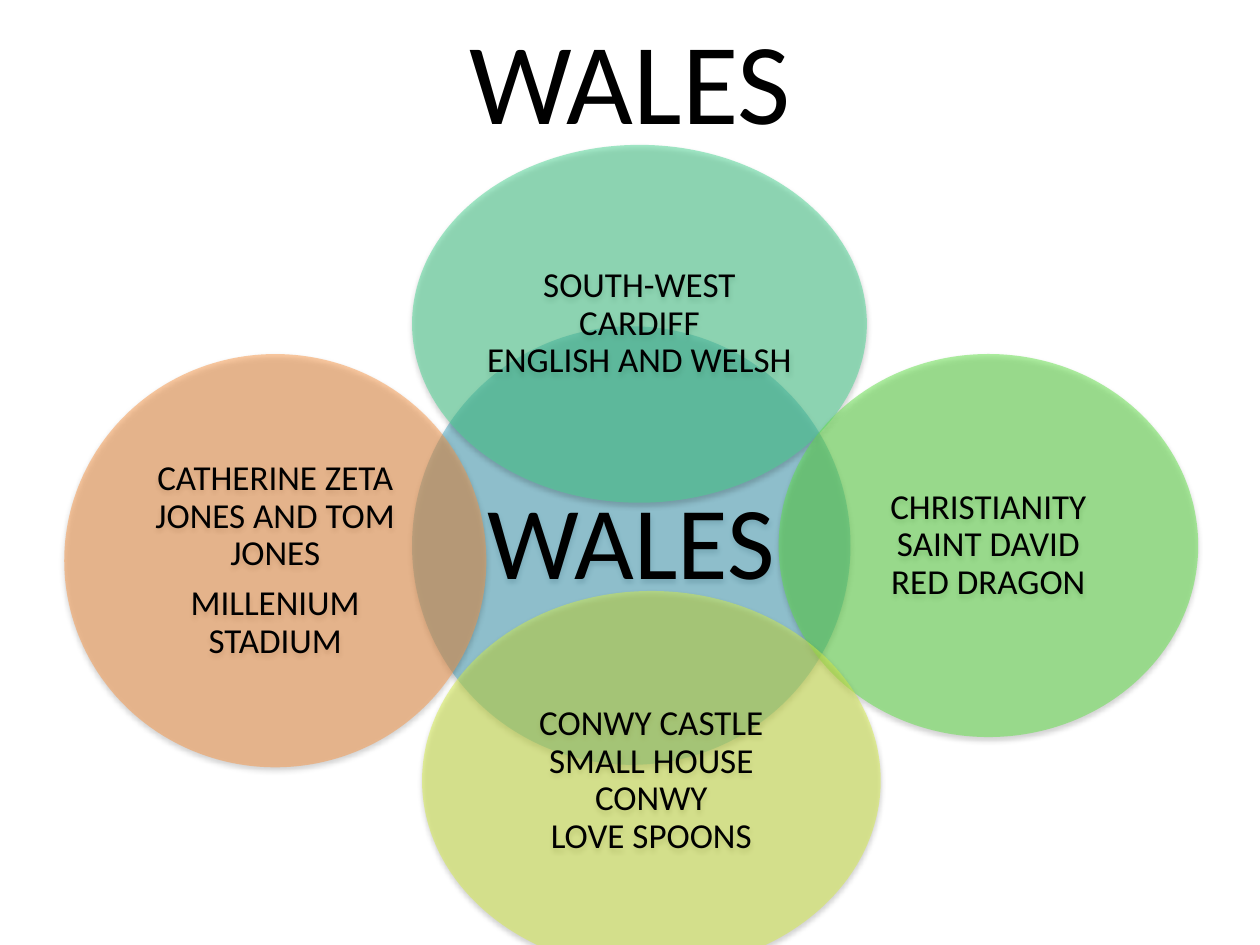
from dataclasses import dataclass

from lxml import etree
from pptx import Presentation
from pptx.dml.color import RGBColor
from pptx.enum.shapes import MSO_SHAPE
from pptx.enum.text import MSO_ANCHOR, MSO_AUTO_SIZE, PP_ALIGN
from pptx.oxml.ns import qn
from pptx.shapes.autoshape import Shape
from pptx.slide import Slide
from pptx.text.text import TextFrame
from pptx.util import Inches, Pt

OVAL = MSO_SHAPE.OVAL
MIDDLE = MSO_ANCHOR.MIDDLE
NO_FIT = MSO_AUTO_SIZE.NONE
CENTER = PP_ALIGN.CENTER

FONT = "Calibri"
COLORS = {
    "text": "000000",
    "shadow": "000000",
    "center": "4BACC6",
    "places": "48D491",
    "symbols": "60E146",
    "sights": "D5EC46",
    "people": "F79646",
}


@dataclass(frozen=True)
class Circle:
    color: str
    left: float
    top: float
    width: float
    height: float
    text: str
    size: int = 20
    inset: float = 0.03


CIRCLES = [
    Circle("center", 3.27, 2.59, 3.48, 3.48, "WALES", 59, 0.08),
    Circle("places", 3.27, 1.15, 3.61, 2.84,
           "SOUTH-WEST\vCARDIFF\vENGLISH AND WELSH"),
    Circle("symbols", 6.18, 2.81, 3.33, 3.04,
           "CHRISTIANITY\vSAINT DAVID\vRED DRAGON"),
    Circle("sights", 3.35, 4.69, 3.64, 3.01,
           "CONWY CASTLE\vSMALL HOUSE CONWY\vLOVE SPOONS"),
    Circle("people", 0.51, 2.81, 3.35, 3.28,
           "CATHERINE ZETA JONES AND TOM JONES\nMILLENIUM STADIUM"),
]


def write_text(frame: TextFrame, text: str, size: int) -> None:
    frame.text = text
    frame.word_wrap = True
    frame.auto_size = NO_FIT
    frame.vertical_anchor = MIDDLE
    for para in frame.paragraphs:
        para.alignment = CENTER
        for span in para.runs:
            span.font.name = FONT
            span.font.size = Pt(size)
            span.font.color.rgb = RGBColor.from_string(COLORS["text"])


def set_alpha(color: etree._Element, percent: int) -> None:
    etree.SubElement(color, qn("a:alpha"), val=str(percent * 1000))


def add_shadow(shape: Shape) -> None:
    shape.shadow.inherit = False
    effects = shape.element.spPr.find(qn("a:effectLst"))
    shadow = etree.SubElement(
        effects, qn("a:outerShdw"), blurRad=str(Pt(3.1)), dist=str(Pt(1.8)),
        dir="5400000", rotWithShape="0")
    color = etree.SubElement(shadow, qn("a:srgbClr"), val=COLORS["shadow"])
    set_alpha(color, 35)


def add_circle(page: Slide, circle: Circle) -> None:
    shape = page.shapes.add_shape(
        OVAL, Inches(circle.left), Inches(circle.top),
        Inches(circle.width), Inches(circle.height))
    shape.fill.solid()
    shape.fill.fore_color.rgb = RGBColor.from_string(COLORS[circle.color])
    set_alpha(shape.element.spPr.find(qn("a:solidFill"))[0], 50)
    shape.line.fill.background()
    add_shadow(shape)

    frame = shape.text_frame
    frame.margin_left = frame.margin_right = Inches(circle.inset)
    frame.margin_top = frame.margin_bottom = Inches(circle.inset)
    write_text(frame, circle.text, circle.size)
    for para in frame.paragraphs:
        para.line_spacing = 0.9
        para.space_after = Pt(circle.size * 0.35)


def main() -> None:
    deck = Presentation()
    deck.slide_width, deck.slide_height = Inches(10), Inches(7.5)
    page = deck.slides.add_slide(deck.slide_layouts.get_by_name("Title Only"))
    title = page.shapes.title
    title.left, title.top = Inches(0), Inches(0)
    title.width, title.height = Inches(10), Inches(1.25)
    write_text(title.text_frame, "WALES", 66)
    for circle in CIRCLES:
        add_circle(page, circle)
    deck.save("out.pptx")


if __name__ == "__main__":
    main()
